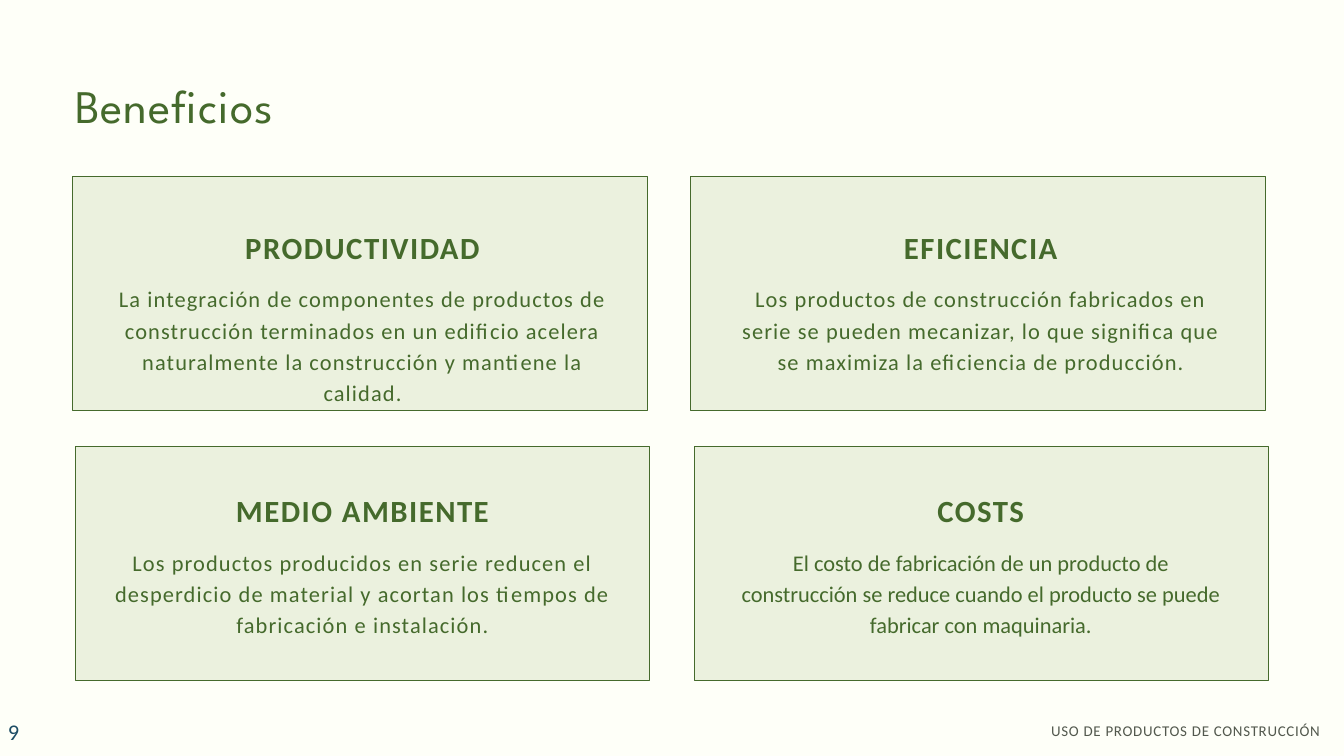
from pptx import Presentation
from pptx.dml.color import RGBColor
from pptx.enum.shapes import MSO_SHAPE
from pptx.enum.text import MSO_ANCHOR, PP_ALIGN
from pptx.util import Inches, Pt

CREAM = RGBColor(0xFE, 0xFF, 0xF8)
PALE_GREEN = RGBColor(0xEB, 0xF1, 0xDE)
GREEN = RGBColor(0x45, 0x6A, 0x2C)
GRAY = RGBColor(0x52, 0x58, 0x4D)
BLUE = RGBColor(0x1E, 0x4D, 0x65)

presentation = Presentation()
presentation.slide_width = Inches(20)
presentation.slide_height = Inches(11.25)
slide = presentation.slides.add_slide(presentation.slide_layouts[6])
slide.background.fill.solid()
slide.background.fill.fore_color.rgb = CREAM


def add_text(text, left, top, width, height, size, line_spacing=None, color=GREEN,
             font="Calibri", align=PP_ALIGN.LEFT, bold=False, letter_spacing=0.0):
    box = slide.shapes.add_textbox(Inches(left), Inches(top), Inches(width), Inches(height))
    frame = box.text_frame
    frame.word_wrap = True
    frame.margin_left = frame.margin_right = frame.margin_top = frame.margin_bottom = 0
    paragraph = frame.paragraphs[0]
    paragraph.alignment = align
    if line_spacing:
        paragraph.line_spacing = Pt(line_spacing)
    paragraph.font.name = font
    paragraph.font.size = Pt(size)
    paragraph.font.bold = bold
    paragraph.font.color.rgb = color
    run = paragraph.add_run()
    run.text = text
    # Letter spacing is stored in hundredths of a point
    run.font._element.set("spc", str(round(letter_spacing * 100)))
    return frame


# Footer and title
add_text("USO DE PRODUCTOS DE CONSTRUCCIÓN", 11.33, 10.7, 8.32, 0.29, 16, 22.4,
         color=GRAY, align=PP_ALIGN.RIGHT, letter_spacing=0.8)
add_text("Beneficios", 1.12, 1.05, 17.71, 0.94, 50, 66.8,
         font="League Spartan", letter_spacing=1)

# Benefit cards: card left and top, text left and top, heading, body, body letter spacing
cards = [
    (1.08, 2.62, 1.7, 3.38, "PRODUCTIVIDAD",
     "La integración de componentes de productos de construcción terminados en un "
     "edificio acelera naturalmente la construcción y mantiene la calidad.", 1.2),
    (10.28, 2.62, 10.9, 3.38, "EFICIENCIA",
     "Los productos de construcción fabricados en serie se pueden mecanizar, lo que "
     "significa que se maximiza la eficiencia de producción.", 1.2),
    (1.12, 6.64, 1.7, 7.3, "MEDIO AMBIENTE",
     "Los productos producidos en serie reducen el desperdicio de material y acortan "
     "los tiempos de fabricación e instalación.", 1.2),
    (10.33, 6.64, 10.9, 7.3, "COSTS",
     "El costo de fabricación de un producto de construcción se reduce cuando el "
     "producto se puede fabricar con maquinaria.", 0),
]
for left, top, text_left, text_top, heading, body, body_spacing in cards:
    card = slide.shapes.add_shape(MSO_SHAPE.RECTANGLE, Inches(left), Inches(top),
                                  Inches(8.55), Inches(3.48))
    card.shadow.inherit = False
    card.fill.solid()
    card.fill.fore_color.rgb = PALE_GREEN
    card.line.color.rgb = GREEN
    card.line.width = Pt(0.75)
    add_text(heading, text_left, text_top, 7.39, 0.56, 33, 41.2,
             align=PP_ALIGN.CENTER, bold=True, letter_spacing=1.6)
    add_text(body, text_left, text_top + 0.8, 7.39, 1.4, 24, 33.6,
             align=PP_ALIGN.CENTER, letter_spacing=body_spacing)

# Slide number
number_frame = add_text("9", 0.02, 10.69, 2.33, 0.4, 24, color=BLUE, letter_spacing=1.2)
number_frame.margin_left = number_frame.margin_right = Inches(0.1)
number_frame.vertical_anchor = MSO_ANCHOR.MIDDLE

presentation.save("out.pptx")
